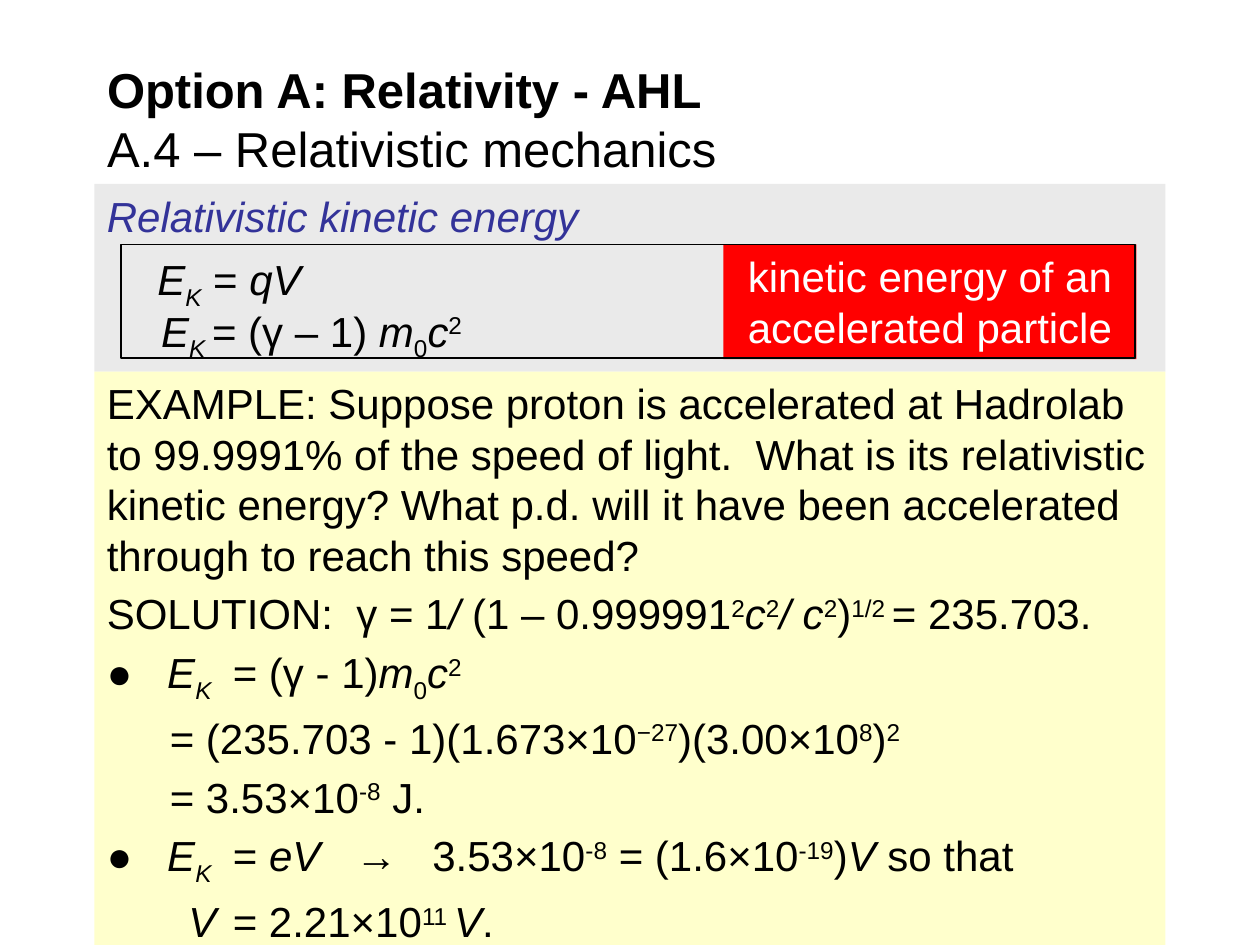
from dataclasses import dataclass

from pptx import Presentation
from pptx.dml.color import RGBColor
from pptx.enum import shapes, text
from pptx.util import Pt

BLACK = RGBColor(0x00, 0x00, 0x00)
WHITE = RGBColor(0xFF, 0xFF, 0xFF)
INDIGO = RGBColor(0x33, 0x33, 0x99)
GREY = RGBColor(0xEA, 0xEA, 0xEA)
CREAM = RGBColor(0xFF, 0xFF, 0xCC)
RED = RGBColor(0xFF, 0x00, 0x00)

FONT = "Arial"
BODY_SIZE = 24
LEFT, WIDTH = 54, 612


@dataclass(frozen=True)
class Run:
    text: str
    italic: bool = False
    baseline: int = 0  # percent of the font size


@dataclass(frozen=True)
class Box:
    left: float
    top: float
    width: float
    height: float

    def lengths(self) -> list[Pt]:
        return [Pt(v) for v in (self.left, self.top, self.width, self.height)]


def it(words: str) -> Run:
    """Italic run."""
    return Run(words, italic=True)


def sup(words: str) -> Run:
    return Run(words, baseline=30)


def sub(words: str, italic: bool = False) -> Run:
    return Run(words, italic, -25)


E_K = [it("E"), sub("K ", italic=True)]
M0_C2 = [it("m"), sub("0"), it("c"), sup("2")]

HEADING = [[it("Relativistic kinetic energy")]]
EXAMPLE = [
    [Run("EXAMPLE: Suppose proton is accelerated at Hadrolab to 99.9991% of "
         "the speed of light.  What is its relativistic kinetic energy? What "
         "p.d. will it have been accelerated through to reach this speed?")],
    [Run("SOLUTION:  γ = 1"), it("/ "), Run("(1 – 0.999991"), sup("2"),
     it("c"), sup("2"), it("/ c"), sup("2"), Run(")"), sup("1/2 "),
     Run("= 235.703.")],
    [Run("●   "), *E_K, Run("\t= (γ - 1)"), *M0_C2],
    [Run("\t= (235.703 - 1)(1.673×10"), sup("−27"), Run(")(3.00×10"),
     sup("8"), Run(")"), sup("2")],
    [Run("\t= 3.53×10"), sup("-8"), Run(" J.")],
    [Run("●   "), *E_K, Run("\t= "), it("eV"), Run("   →   3.53×10"),
     sup("-8"), Run(" = (1.6×10"), sup("-19"), Run(")"), it("V"),
     Run(" so that")],
    [it("       V"), Run("\t= 2.21×10"), sup("11 "), it("V"), Run(".")],
]
EQUATIONS = [
    (Box(82.8, 141.84, 221.76, 31.68),
     [it("E"), sub("K", italic=True), Run(" = "), it("qV")]),
    (Box(84.96, 171.36, 221.76, 31.68),
     [*E_K, Run("= (γ – 1) "), *M0_C2]),
]


def write(tf, lines: list[list[Run]], color: RGBColor = BLACK,
          align=text.PP_ALIGN.LEFT, spacing: float | None = None) -> None:
    tf.word_wrap = True
    tf.vertical_anchor = text.MSO_ANCHOR.TOP
    for i, runs in enumerate(lines):
        p = tf.add_paragraph() if i else tf.paragraphs[0]
        p.alignment = align
        p.line_spacing = spacing
        if i:
            p.space_before = Pt(0.2 * BODY_SIZE)
        p.font.name, p.font.size = FONT, Pt(BODY_SIZE)
        p.font.color.rgb = color
        for run in runs:
            r = p.add_run()
            r.text = run.text
            if run.italic:
                r.font.italic = True
            if run.baseline:
                r._r.get_or_add_rPr().set("baseline", str(run.baseline * 1000))


def add_rect(parent, box: Box, fill: RGBColor | None = None):
    """Filled rectangle without outline, or a thin black frame if no fill."""
    sp = parent.add_shape(shapes.MSO_SHAPE.RECTANGLE, *box.lengths())
    sp.shadow.inherit = False
    if fill is None:
        sp.fill.background()
        sp.line.color.rgb, sp.line.width = BLACK, Pt(1)
    else:
        sp.fill.solid()
        sp.fill.fore_color.rgb = fill
        sp.line.fill.background()
    return sp


def format_title(title) -> None:
    title.left, title.top, title.width, title.height = Box(
        LEFT, 32.4, WIDTH, 70.56).lengths()
    tf = title.text_frame
    tf.word_wrap = True
    tf.auto_size = text.MSO_AUTO_SIZE.NONE
    tf.vertical_anchor = text.MSO_ANCHOR.MIDDLE
    p = tf.paragraphs[0]
    p.alignment = text.PP_ALIGN.LEFT
    p.font.name, p.font.size = FONT, Pt(28)
    p.font.color.rgb = BLACK
    r = p.add_run()
    r.text, r.font.bold = "Option A: Relativity - AHL", True
    p.add_line_break()
    p.add_run().text = "A.4 – Relativistic mechanics"


def add_formula_panel(s) -> None:
    group = s.shapes.add_group_shape().shapes
    label = add_rect(group, Box(413.28, 139.68, 236.16, 65.52), RED)
    write(label.text_frame, [[Run("kinetic energy of an accelerated particle")]],
          WHITE, text.PP_ALIGN.CENTER)
    label.text_frame.auto_size = text.MSO_AUTO_SIZE.SHAPE_TO_FIT_TEXT
    add_rect(group, Box(69.12, 139.68, 579.6, 64.8))
    for box, runs in EQUATIONS:
        sp = group.add_textbox(*box.lengths())
        write(sp.text_frame, [runs], spacing=0.9)


def main() -> None:
    prs = Presentation()
    prs.slide_width, prs.slide_height = Pt(720), Pt(540)
    s = prs.slides.add_slide(prs.slide_layouts[5])
    format_title(s.shapes.title)
    heading = add_rect(s.shapes, Box(LEFT, 105.12, WIDTH, 107.28), GREY)
    write(heading.text_frame, HEADING, INDIGO)
    example = add_rect(s.shapes, Box(LEFT, 212.4, WIDTH, 327.6), CREAM)
    write(example.text_frame, EXAMPLE)
    add_formula_panel(s)
    prs.save("out.pptx")


if __name__ == "__main__":
    main()
